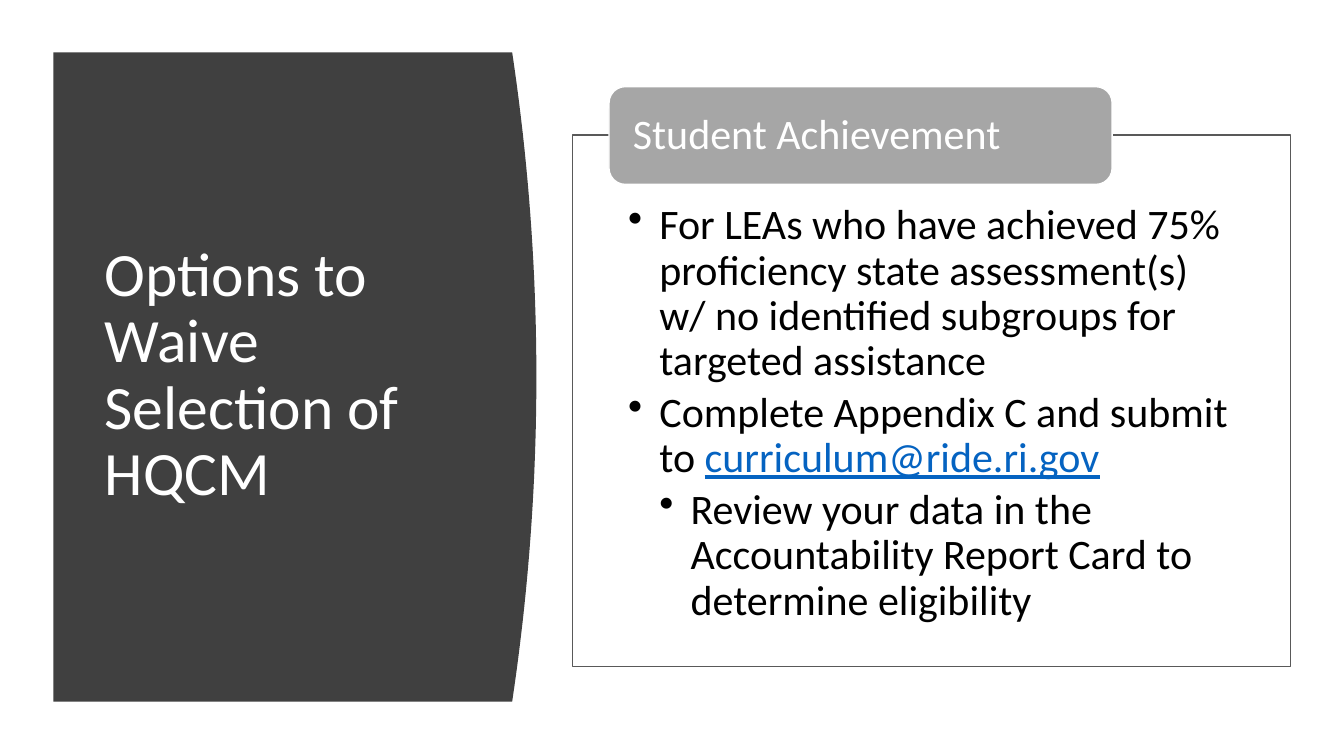
from lxml.etree import SubElement
from pptx import Presentation
from pptx.dml.color import RGBColor as RGB
from pptx.enum.shapes import MSO_SHAPE as Shape
from pptx.enum.text import MSO_ANCHOR as Anchor, PP_ALIGN as Align
from pptx.oxml.ns import qn
from pptx.util import Inches, Pt

COLORS = {"dark": "404040", "gray": "A6A6A6", "line": "595959",
          "white": "FFFFFF", "black": "000000", "link": "0563C1"}


def color(name):
    return RGB.from_string(COLORS[name])


def style(para, size, name):
    para.alignment = Align.LEFT
    para.line_spacing = 0.9
    para.font.name = "Calibri"
    para.font.size = Pt(size)
    para.font.color.rgb = color(name)


deck = Presentation()
deck.slide_width, deck.slide_height = Inches(13.33), Inches(7.5)
shapes = deck.slides.add_slide(deck.slide_layouts[6]).shapes

# Dark panel whose right edge is a shallow parabola
left, top, right, bottom = 0.53, 0.52, 5.08, 6.96
bulge, steps = 0.24, 40
edge = []
for i in range(steps + 1):
    t = i / steps
    x = right + bulge * 4 * t * (1 - t)
    y = top + (bottom - top) * t
    edge.append((Inches(x), Inches(y)))
pen = shapes.build_freeform(Inches(left), Inches(top))
pen.add_line_segments(edge + [(Inches(left), Inches(bottom))], close=True)
panel = pen.convert_to_shape()
panel.shadow.inherit = False
panel.fill.solid()
panel.fill.fore_color.rgb = color("dark")
panel.line.fill.background()

# Title
title = shapes.add_textbox(Inches(0.94), Inches(1.11), Inches(3.74), Inches(5.24))
frame = title.text_frame
frame.word_wrap = True
frame.vertical_anchor = Anchor.MIDDLE
frame.text = "Options to Waive Selection of HQCM"
style(frame.paragraphs[0], 44, "white")

# Framed box and its header tab
cards = []
for kind, box, fill, line in [
    (Shape.RECTANGLE, (5.68, 1.34, 7.12, 5.27), "white", "line"),
    (Shape.ROUNDED_RECTANGLE, (6.04, 0.86, 4.99, 0.97), "gray", "white"),
]:
    card = shapes.add_shape(kind, *map(Inches, box))
    card.shadow.inherit = False
    card.fill.solid()
    card.fill.fore_color.rgb = color(fill)
    card.line.color.rgb = color(line)
    card.line.width = Pt(1)
    card.text_frame.word_wrap = True
    cards.append(card)
body, tab = cards

# The box fill is 90% opaque
tone = body.fill._xPr.find(".//" + qn("a:srgbClr"))
SubElement(tone, qn("a:alpha"), val="90000")

# Header text
frame = tab.text_frame
frame.vertical_anchor = Anchor.MIDDLE
frame.margin_left = frame.margin_right = Inches(0.19)
frame.margin_top = frame.margin_bottom = 0
frame.text = "Student Achievement"
style(frame.paragraphs[0], 30, "white")

# Bulleted text: level, then runs with their colours
points = [
    (1, [("For LEAs who have achieved 75% proficiency state assessment(s) "
          "w/ no identified subgroups for targeted assistance", "black")]),
    (1, [("Complete Appendix C and submit to ", "black"),
         ("curriculum@ride.ri.gov", "link")]),
    (2, [("Review your data in the Accountability Report Card to "
          "determine eligibility", "black")]),
]
frame = body.text_frame
frame.vertical_anchor = Anchor.TOP
frame.margin_left = frame.margin_right = Inches(0.55)
frame.margin_top, frame.margin_bottom = Inches(0.68), Inches(0.23)
indent = Inches(0.31)
for i, (level, runs) in enumerate(points):
    para = frame.add_paragraph() if i else frame.paragraphs[0]
    para.level = level
    props = para._p.get_or_add_pPr()
    props.set("marL", str(indent * level))
    props.set("indent", str(-indent))
    SubElement(props, qn("a:buChar"), char="•")
    style(para, 30, "black")
    para.space_after = Pt(4.5)
    for text, name in runs:
        run = para.add_run()
        run.text = text
        if name == "link":
            run.font.color.rgb = color(name)
            run.font.underline = True

deck.save("out.pptx")
